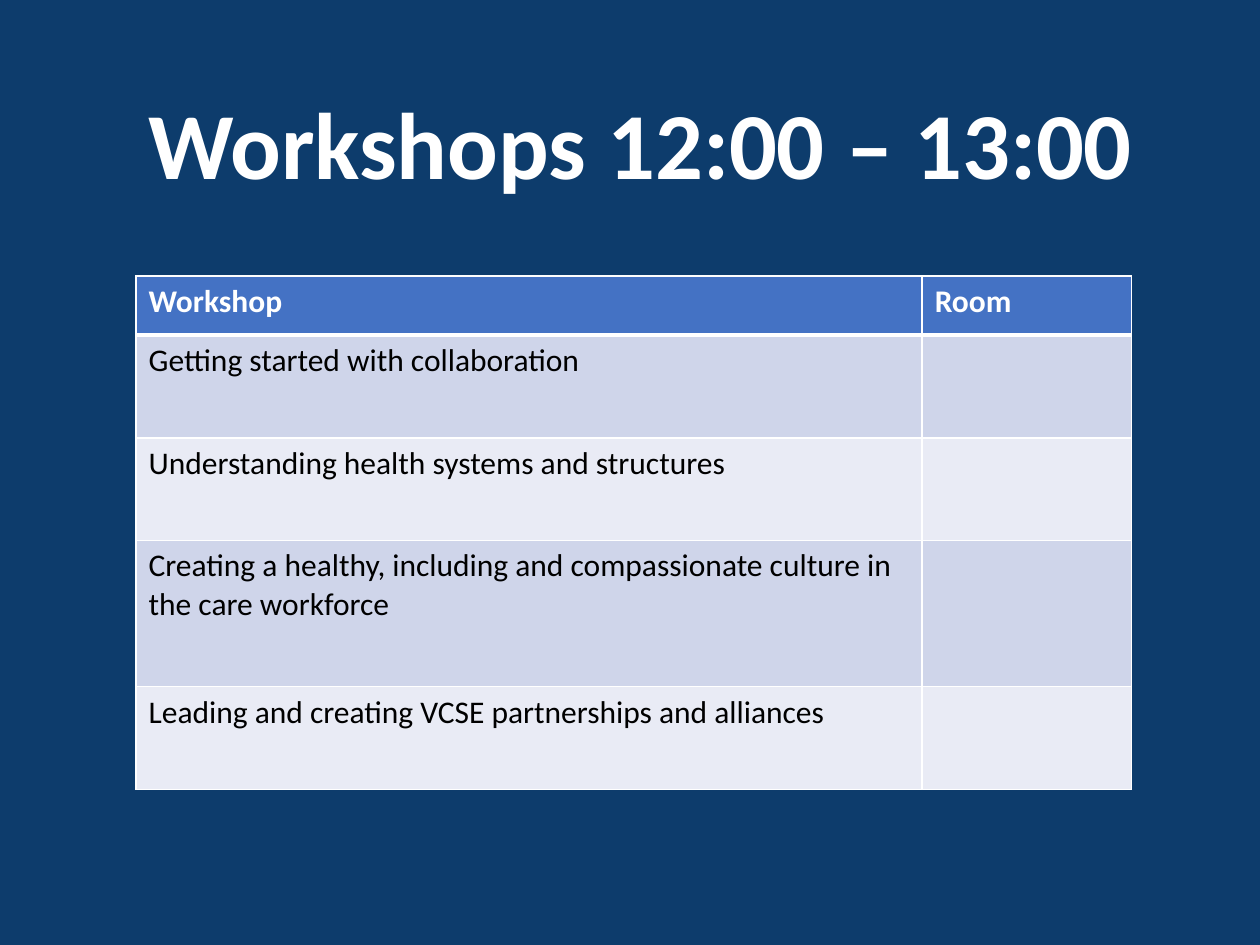
"""Build the workshop timetable slide."""
from lxml import etree
from pptx import Presentation
from pptx.dml.color import RGBColor
from pptx.oxml.ns import qn
from pptx.util import Pt

NAVY = RGBColor(0x0D, 0x3C, 0x6C)
WHITE = RGBColor(0xFF, 0xFF, 0xFF)
BLACK = RGBColor(0, 0, 0)
HEADER_BLUE = RGBColor(0x44, 0x72, 0xC4)
BANDS = (RGBColor(0xCF, 0xD5, 0xEA), RGBColor(0xE9, 0xEB, 0xF5))
FONT = "Calibri"
LEFT = 77.75
COLUMN_WIDTHS = (449.25, 119.5)
ROWS = (
    (33.75, ("Workshop", "Room")),
    (58.75, ("Getting started with collaboration", "")),
    (58.75, ("Understanding health systems and structures", "")),
    (83.5, ("Creating a healthy, including and compassionate culture in the care workforce", "")),
    (58.75, ("Leading and creating VCSE partnerships and alliances", "")),
)


def style_font(paragraph, size, color, bold):
    paragraph.font.name = FONT
    paragraph.font.size = Pt(size)
    paragraph.font.color.rgb = color
    paragraph.font.bold = bold


def add_title(slide, text):
    box = slide.shapes.add_textbox(Pt(LEFT), Pt(45), Pt(621.4), Pt(72.7))
    box.text_frame.word_wrap = True
    paragraph = box.text_frame.paragraphs[0]
    paragraph.text = text
    style_font(paragraph, 54, WHITE, True)


def add_borders(cell, widths):
    properties = cell._tc.get_or_add_tcPr()
    for side, width in zip("LRTB", widths):
        line = etree.SubElement(properties, qn(f"a:ln{side}"), w=str(Pt(width)))
        fill = etree.SubElement(line, qn("a:solidFill"))
        etree.SubElement(fill, qn("a:srgbClr"), val=str(WHITE))


def fill_cell(cell, text, row_index):
    is_header = row_index == 0
    top = 3 if row_index == 1 else 1
    bottom = 3 if is_header else 1
    add_borders(cell, (1, 1, top, bottom))
    cell.fill.solid()
    cell.fill.fore_color.rgb = HEADER_BLUE if is_header else BANDS[(row_index - 1) % 2]
    if text:
        cell.text = text
        style_font(cell.text_frame.paragraphs[0], 18, WHITE if is_header else BLACK, is_header)


def add_workshop_table(slide):
    height = sum(row_height for row_height, _ in ROWS)
    frame = slide.shapes.add_table(
        len(ROWS), len(COLUMN_WIDTHS), Pt(LEFT), Pt(157.75), Pt(sum(COLUMN_WIDTHS)), Pt(height))
    table = frame.table
    for column, width in zip(table.columns, COLUMN_WIDTHS):
        column.width = Pt(width)
    for row_index, (row_height, texts) in enumerate(ROWS):
        table.rows[row_index].height = Pt(row_height)
        for column_index, text in enumerate(texts):
            fill_cell(table.cell(row_index, column_index), text, row_index)


def main():
    presentation = Presentation()
    presentation.slide_width = Pt(720)
    presentation.slide_height = Pt(540)
    slide = presentation.slides.add_slide(presentation.slide_layouts[6])
    slide.background.fill.solid()
    slide.background.fill.fore_color.rgb = NAVY
    add_title(slide, "Workshops 12:00 – 13:00")
    add_workshop_table(slide)
    presentation.save("out.pptx")


if __name__ == "__main__":
    main()
